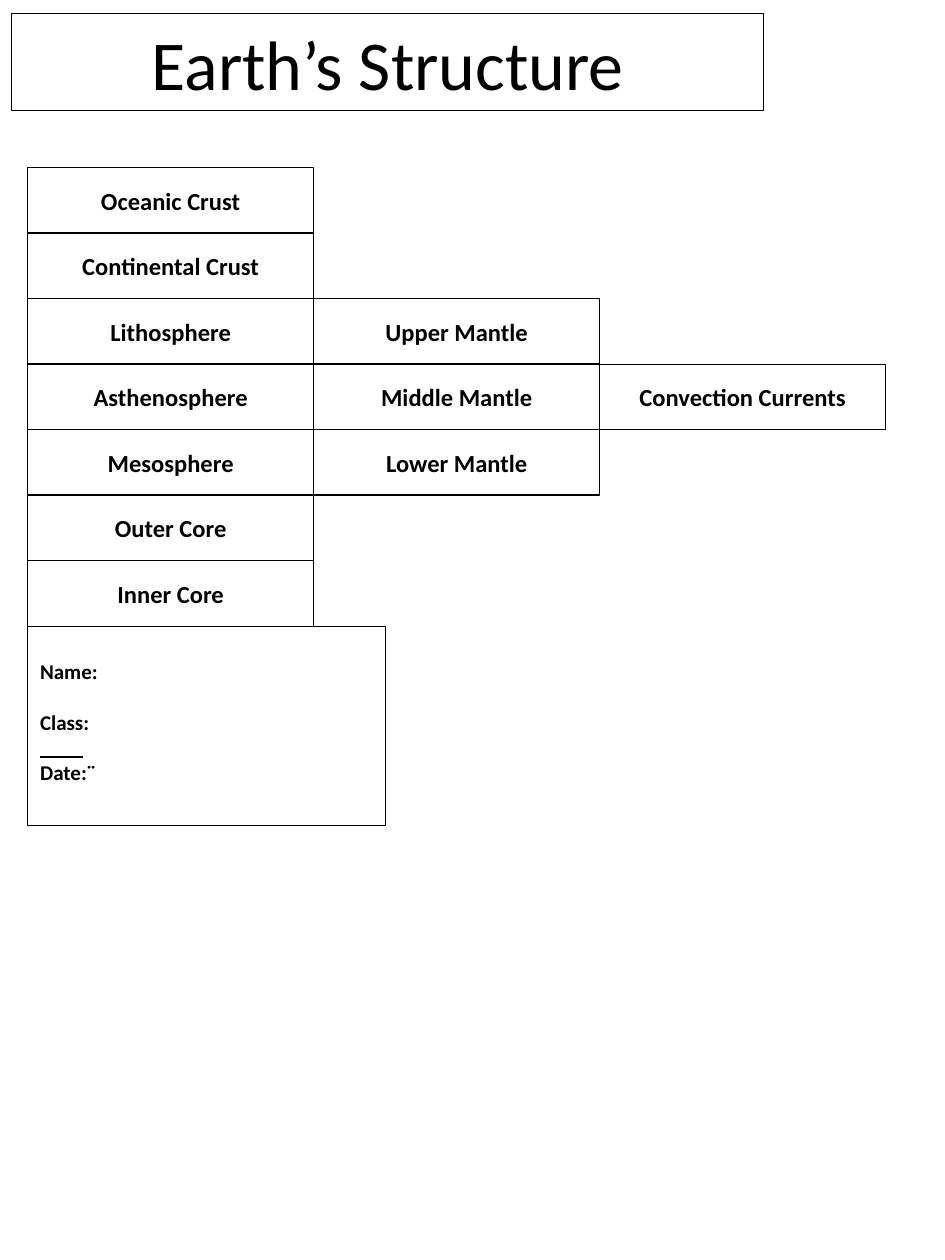
"""Build the Earth's Structure label sheet."""
from dataclasses import dataclass

from lxml import etree
from pptx import Presentation
from pptx.dml.color import RGBColor
from pptx.enum.shapes import MSO_CONNECTOR, MSO_SHAPE
from pptx.enum.text import MSO_ANCHOR, MSO_AUTO_SIZE, PP_ALIGN
from pptx.oxml.ns import qn
from pptx.util import Pt

RECTANGLE = MSO_SHAPE.RECTANGLE
STRAIGHT = MSO_CONNECTOR.STRAIGHT
TOP, MIDDLE = MSO_ANCHOR.TOP, MSO_ANCHOR.MIDDLE
LEFT, CENTER = PP_ALIGN.LEFT, PP_ALIGN.CENTER
NO_AUTOFIT = MSO_AUTO_SIZE.NONE


@dataclass(frozen=True)
class Theme:
    ink: RGBColor = RGBColor(0, 0, 0)
    font: str = "Calibri"
    title_size: float = 40
    label_size: float = 14
    form_size: float = 12
    outline: float = 0.75
    rule: float = 1


theme = Theme()


def style_box(shape, anchor):
    shape.fill.background()
    shape.line.color.rgb = theme.ink
    shape.line.width = Pt(theme.outline)
    frame = shape.text_frame
    frame.word_wrap = True
    frame.auto_size = NO_AUTOFIT
    frame.vertical_anchor = anchor
    return frame


def add_text(paragraph, text, size, bold, alignment):
    paragraph.alignment = alignment
    run = paragraph.add_run()
    run.text = text
    run.font.name = theme.font
    run.font.size = Pt(size)
    run.font.bold = bold
    run.font.color.rgb = theme.ink


presentation = Presentation()
presentation.slide_width = Pt(540)
presentation.slide_height = Pt(720)
slide = presentation.slides.add_slide(presentation.slide_layouts[5])

title = slide.shapes.title
title.left, title.top, title.width, title.height = Pt(6.5), Pt(7.9), Pt(430), Pt(55.4)
frame = style_box(title, MIDDLE)
add_text(frame.paragraphs[0], "Earth’s Structure", theme.title_size, False, CENTER)

grid_left, grid_top = 15.84, 95.76
label_width, label_height = 163.44, 37.44
columns = [
    (0, ["Oceanic Crust", "Continental Crust", "Lithosphere", "Asthenosphere",
         "Mesosphere", "Outer Core", "Inner Core"]),
    (2, ["Upper Mantle", "Middle Mantle", "Lower Mantle"]),
    (3, ["Convection Currents"]),
]
for column, (first_row, labels) in enumerate(columns):
    for row, label in enumerate(labels, first_row):
        box = slide.shapes.add_shape(
            RECTANGLE,
            Pt(grid_left + column * label_width), Pt(grid_top + row * label_height),
            Pt(label_width), Pt(label_height))
        box.shadow.inherit = False
        frame = style_box(box, MIDDLE)
        add_text(frame.paragraphs[0], label, theme.label_size, True, CENTER)

form_top = grid_top + len(columns[0][1]) * label_height
line_height = 14.65
form = slide.shapes.add_shape(
    RECTANGLE, Pt(grid_left), Pt(form_top), Pt(204.5), Pt(113.8))
form.shadow.inherit = False
frame = style_box(form, TOP)
frame.margin_top = Pt(3.6 + line_height)
for index, field in enumerate(["Name:", "Class:", "Date:¨"]):
    paragraph = frame.paragraphs[0] if index == 0 else frame.add_paragraph()
    paragraph.space_after = Pt(line_height)
    add_text(paragraph, field, theme.form_size, True, LEFT)

rule_left, rule_top = grid_left + 7.2, form_top + 74.8
rule = slide.shapes.add_connector(
    STRAIGHT, Pt(rule_left), Pt(rule_top), Pt(rule_left + 24.4), Pt(rule_top))
rule.line.color.rgb = theme.ink
rule.line.width = Pt(theme.rule)
etree.SubElement(rule.element.spPr, qn("a:effectLst"))

presentation.save("out.pptx")
